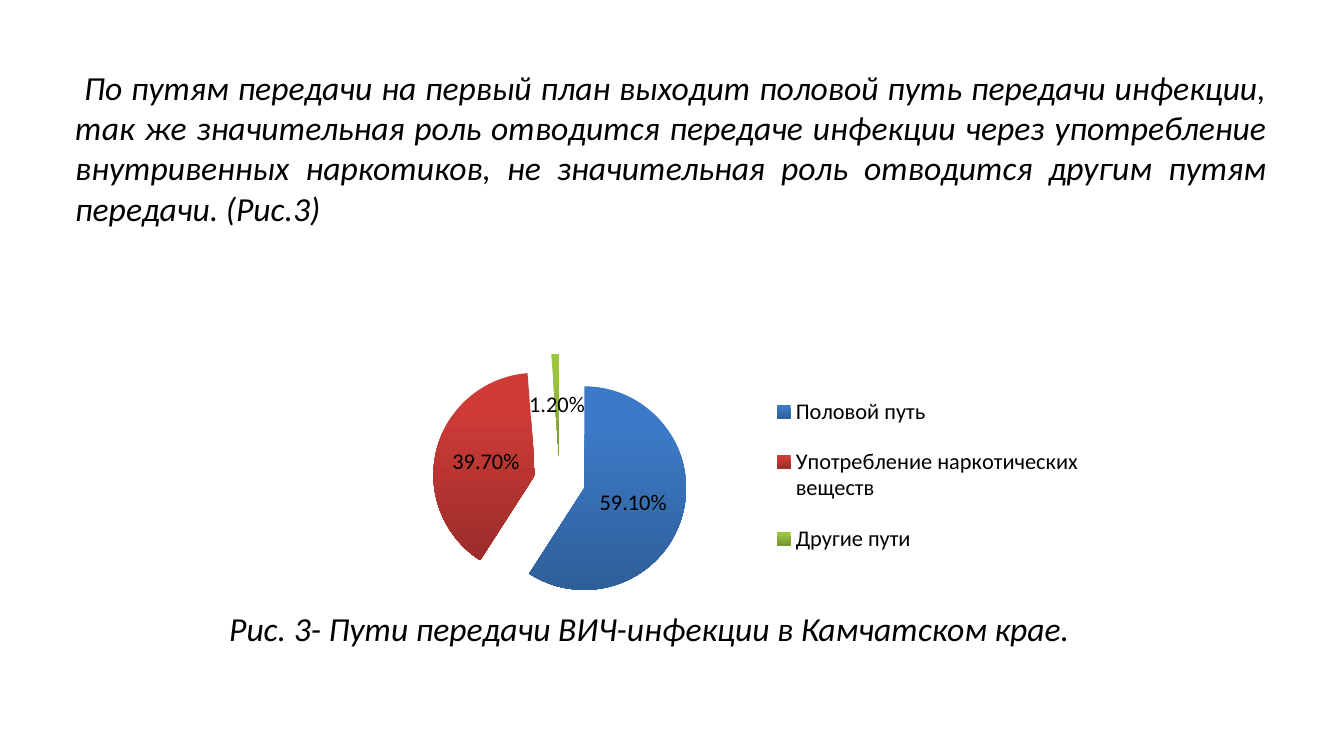
from lxml import etree
from pptx import Presentation
from pptx.chart.data import CategoryChartData
from pptx.dml.color import RGBColor
from pptx.enum.chart import XL_CHART_TYPE, XL_LABEL_POSITION, XL_LEGEND_POSITION
from pptx.enum.text import PP_ALIGN
from pptx.oxml.ns import qn
from pptx.util import Emu, Pt

FONT = "Calibri"
COLORS = {"text": "000000"}
INTRO = (" По путям передачи на первый план выходит половой путь передачи инфекции, "
         "так же значительная роль отводится передаче инфекции через употребление "
         "внутривенных наркотиков, не значительная роль отводится другим путям "
         "передачи. (Рис.3)")
CAPTION = "Рис. 3- Пути передачи ВИЧ-инфекции в Камчатском крае."
# text, alignment, (left, top, width, height)
TEXTS = [
    (INTRO, PP_ALIGN.JUSTIFY, (62, 60, 1218, 176)),
    (CAPTION, PP_ALIGN.LEFT, (216, 601, 899, 54)),
]
# category, share, top and bottom colour of the slice
ROUTES = [
    ("Половой путь", 0.591, ("3C7AC7", "2E5F99")),
    ("Употребление наркотических веществ", 0.397, ("CE3B37", "9B2D2A")),
    ("Другие пути", 0.012, ("9BC53F", "769535")),
]
CHART_BOX = (259, 336, 836, 296)
PLOT_LAYOUT = (0.2, 0.06, 0.32, 0.86)
LEGEND_LAYOUT = (0.61, 0.13, 0.38, 0.68)
EXPLOSION = 25


def px(n):
    return Emu(round(n * 9144000 / 1344))


def style_font(font, size, italic=False):
    font.name, font.size, font.italic = FONT, Pt(size), italic
    font.color.rgb = RGBColor.from_string(COLORS["text"])


def add_text(slide, text, align, box):
    tf = slide.shapes.add_textbox(*map(px, box)).text_frame
    tf.word_wrap = True
    p = tf.paragraphs[0]
    p.text, p.alignment = text, align
    style_font(p.runs[0].font, 18, italic=True)


def make_layout(box, inner=False):
    """Return a c:layout element with fractions of the chart area."""
    layout = etree.Element(qn("c:layout"))
    manual = etree.SubElement(layout, qn("c:manualLayout"))
    settings = [("layoutTarget", "inner")] if inner else []
    settings += [("xMode", "edge"), ("yMode", "edge"), *zip("xywh", box)]
    for tag, value in settings:
        etree.SubElement(manual, qn("c:" + tag)).set("val", str(value))
    return layout


def add_pie(slide):
    data = CategoryChartData(number_format="0.00%")
    data.categories = [name for name, _, _ in ROUTES]
    data.add_series("Series 1", [share for _, share, _ in ROUTES])
    chart = slide.shapes.add_chart(XL_CHART_TYPE.PIE, *map(px, CHART_BOX), data).chart
    chart.has_title = False
    style_font(chart.font, 18)

    chart.has_legend = True
    legend = chart.legend
    legend.position = XL_LEGEND_POSITION.RIGHT
    legend.include_in_layout = False
    style_font(legend.font, 12)
    for old in legend._element.findall(qn("c:layout")):
        legend._element.remove(old)
    legend._element.find(qn("c:legendPos")).addnext(make_layout(LEGEND_LAYOUT))

    area = chart._chartSpace.chart.plotArea
    for old in area.findall(qn("c:layout")):
        area.remove(old)
    area.insert(0, make_layout(PLOT_LAYOUT, inner=True))

    plot = chart.plots[0]
    plot.vary_by_categories = True
    series = plot.series[0]
    explosion = etree.Element(qn("c:explosion"))
    explosion.set("val", str(EXPLOSION))
    series._element.find(qn("c:tx")).addnext(explosion)
    for i, (_, _, shades) in enumerate(ROUTES):
        fmt = series.points[i].format
        fmt.line.fill.background()
        fmt.fill.gradient()
        fmt.fill.gradient_angle = 270
        for stop, shade, position in zip(fmt.fill.gradient_stops, shades, (0.2, 1)):
            stop.color.rgb = RGBColor.from_string(shade)
            stop.position = position

    labels = series.data_labels
    labels.show_value = True
    labels.number_format = "0.00%"
    labels.number_format_is_linked = False
    labels.position = XL_LABEL_POSITION.CENTER
    style_font(labels.font, 12)


def main():
    prs = Presentation()
    prs.slide_width, prs.slide_height = px(1344), px(756)
    slide = prs.slides.add_slide(prs.slide_layouts[6])
    add_pie(slide)
    for text, align, box in TEXTS:
        add_text(slide, text, align, box)
    prs.save("out.pptx")


if __name__ == "__main__":
    main()
